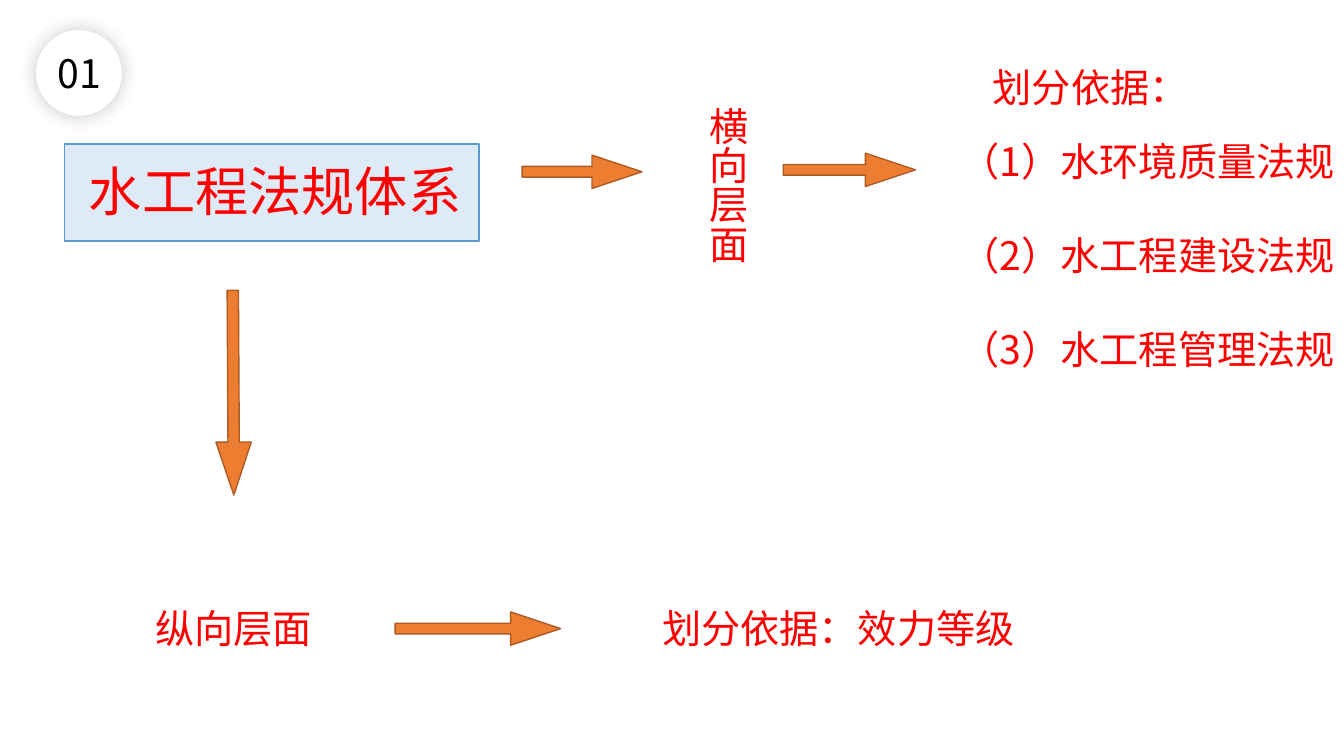
from lxml.etree import SubElement
from pptx import Presentation
from pptx.dml.color import RGBColor
from pptx.enum.shapes import MSO_SHAPE as Preset
from pptx.enum.text import MSO_ANCHOR as Anchor, MSO_AUTO_SIZE as AutoSize, PP_ALIGN as Align
from pptx.oxml.ns import qn
from pptx.util import Cm, Pt

FONT = "Noto Sans CJK SC"
RED = "FF0000"
ARROW_THICKNESS = 0.84
LABEL_HEIGHT = 1.45


def rgb(hex_color):
    """Return the colour for a hex string."""
    return RGBColor.from_string(hex_color)


def lengths(*values):
    """Convert centimetre values to slide lengths."""
    return [Cm(value) for value in values]


def place(holder, left, top, width, height):
    """Move and size a placeholder, in centimetres."""
    holder.left, holder.top, holder.width, holder.height = lengths(left, top, width, height)


def write(frame, lines, size=28, color=RED, align=Align.LEFT, wrap=False, gap=0):
    """Fill a text frame with equally formatted paragraphs."""
    frame.text = "\n".join(lines)
    frame.word_wrap = wrap
    frame.auto_size = AutoSize.NONE if wrap else AutoSize.SHAPE_TO_FIT_TEXT
    frame.vertical_anchor = Anchor.TOP
    frame.margin_left = frame.margin_right = Cm(0.13)
    frame.margin_top = frame.margin_bottom = Cm(0.13)
    for index, paragraph in enumerate(frame.paragraphs):
        paragraph.alignment = align
        paragraph.space_before = Pt(gap if index else 0)
        font = paragraph.font
        font.name, font.size = FONT, Pt(size)
        font.color.rgb = rgb(color)
        defaults = paragraph._p.pPr.find(qn("a:defRPr"))
        SubElement(defaults, qn("a:ea")).set("typeface", FONT)


def add_label(shapes, text, left, top, width, vertical=False, **style):
    """Add a one-line text box, optionally set vertically."""
    label = shapes.add_textbox(*lengths(left, top, width, LABEL_HEIGHT))
    write(label.text_frame, [text], **style)
    if vertical:
        label.text_frame._txBody.bodyPr.set("vert", "eaVert")


def add_figure(shapes, preset, box, fill, line=None):
    """Add a filled preset shape without the theme shadow."""
    figure = shapes.add_shape(preset, *lengths(*box))
    figure.shadow.inherit = False
    figure.fill.solid()
    figure.fill.fore_color.rgb = rgb(fill)
    if line:
        figure.line.color.rgb = rgb(line)
        figure.line.width = Pt(1)
    else:
        figure.line.fill.background()
    return figure


def add_arrow(shapes, left, top, length, thickness=ARROW_THICKNESS, rotation=0):
    """Add a slim orange block arrow."""
    arrow = add_figure(shapes, Preset.RIGHT_ARROW, (left, top, length, thickness), "ED7D31", "AD5B24")
    arrow.adjustments[0], arrow.adjustments[1] = 0.32, 1.5
    arrow.rotation = rotation


def add_badge(shapes, number):
    """Add the numbered white disc with its soft glow."""
    badge = shapes.add_group_shape().shapes
    disc = add_figure(badge, Preset.OVAL, (0.91, 0.76, 2.16, 2.16), "FFFFFF")
    effects = disc.element.spPr.find(qn("a:effectLst"))
    glow = SubElement(effects, qn("a:outerShdw"), blurRad=str(Pt(14)), dist="0", dir="0", algn="ctr", rotWithShape="0")
    tint = SubElement(glow, qn("a:srgbClr"), val="000000")
    SubElement(tint, qn("a:alpha"), val="22000")
    add_label(badge, number, 0.84, 1.12, 2.31, color="000000", align=Align.CENTER, wrap=True)


def fill_title(slide, text):
    """Put the title on its pale blue panel."""
    panel = add_figure(slide.shapes, Preset.RECTANGLE, (1.63, 3.63, 10.44, 2.44), "DEEBF7", "5B9BD5")
    title = slide.shapes.title
    place(title, 2.11, 3.86, 9.73, 1.88)
    write(title.text_frame, [text], size=38)
    panel.element.addnext(title.element)


def fill_list(holder, items):
    """Set the numbered items in the body placeholder without bullets."""
    place(holder, 24.08, 3.33, 9.8, 6.25)
    write(holder.text_frame, items, wrap=True, gap=33.5)
    for paragraph in holder.text_frame.paragraphs:
        properties = paragraph._p.pPr
        properties.set("marL", "0")
        properties.set("indent", "0")
        properties.find(qn("a:defRPr")).addprevious(SubElement(properties, qn("a:buNone")))


def main():
    """Build the slide and save it."""
    deck = Presentation()
    deck.slide_width, deck.slide_height = lengths(33.87, 19.05)
    slide = deck.slides.add_slide(deck.slide_layouts[1])
    shapes = slide.shapes

    fill_title(slide, "水工程法规体系")
    add_arrow(shapes, 13.16, 3.91, 3.02)
    add_arrow(shapes, 3.3, 9.45, 5.16, thickness=0.89, rotation=89.7)
    add_arrow(shapes, 19.74, 3.86, 3.33)
    add_arrow(shapes, 9.96, 15.42, 4.17)

    add_label(shapes, "纵向层面", 3.78, 15.11, 4.24)
    add_label(shapes, "横向层面", 14.81, 2.57, 4.24, vertical=True)
    add_label(shapes, "划分依据：效力等级", 16.56, 15.11, 9.22)
    add_label(shapes, "划分依据：", 24.89, 1.47, 5.23)
    topics = ["水环境质量", "水工程建设", "水工程管理"]
    fill_list(slide.placeholders[1], [f"（{number}）{topic}法规" for number, topic in enumerate(topics, 1)])
    add_badge(shapes, "01")
    deck.save("out.pptx")


if __name__ == "__main__":
    main()
